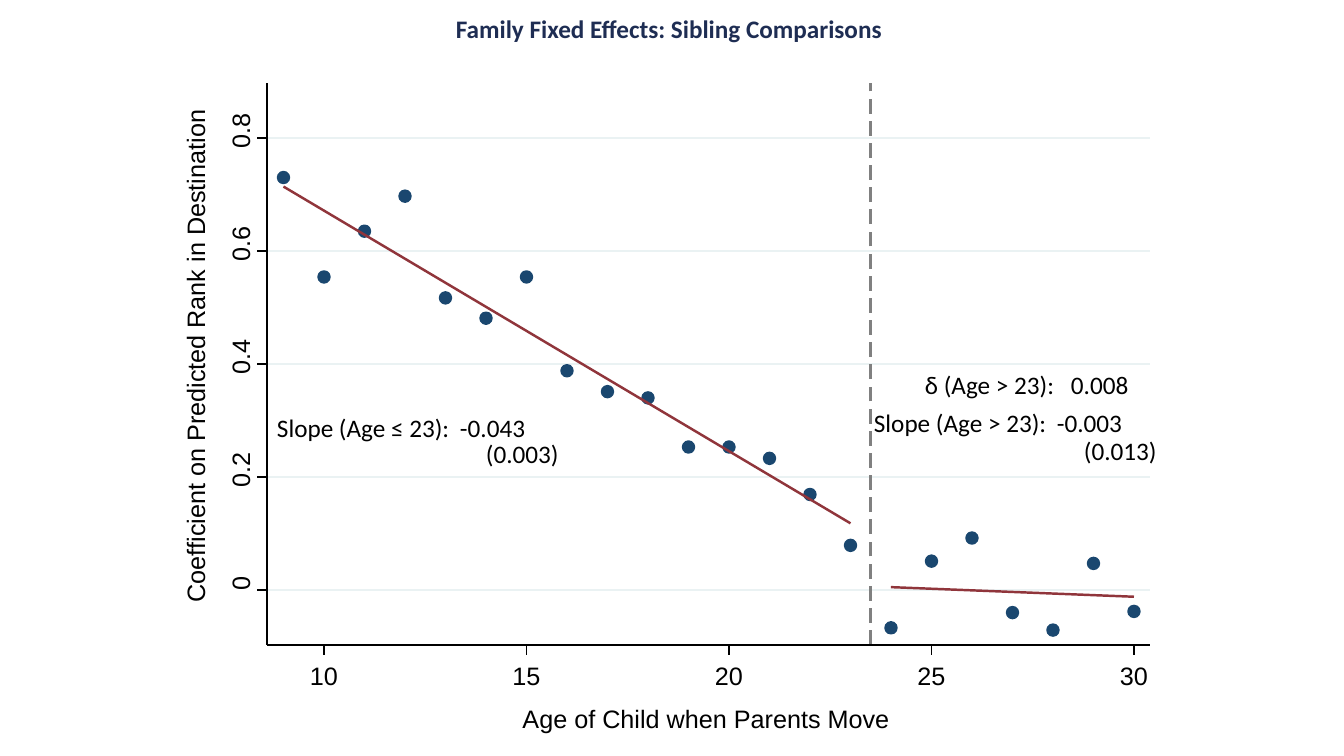
from lxml import etree
from pptx import Presentation
from pptx.dml.color import RGBColor
from pptx.enum.shapes import MSO_CONNECTOR, MSO_SHAPE
from pptx.enum.text import MSO_ANCHOR, MSO_AUTO_SIZE, PP_ALIGN
from pptx.oxml.ns import qn
from pptx.util import Emu, Pt

STRAIGHT, OVAL = MSO_CONNECTOR.STRAIGHT, MSO_SHAPE.OVAL
TOP, NO_AUTOFIT = MSO_ANCHOR.TOP, MSO_AUTO_SIZE.NONE
LEFT, CENTER = PP_ALIGN.LEFT, PP_ALIGN.CENTER

EMU_PER_PX = 914400 / 100.8
SLIDE_SIZE = (1344, 756)

COLORS = {
    "heading": "1E2D53",
    "text": "000000",
    "axis": "000000",
    "grid": "EAF2F3",
    "dots": "1A476F",
    "fit": "90353B",
    "cutoff": "808080",
}
HEADING_FONT = {"name": "Calibri", "size": Pt(18), "bold": True}
NOTE_FONT = {"name": "Calibri", "size": Pt(18)}
AXIS_FONT = {"name": "Arial", "size": Pt(18)}
NO_MARGINS = {"margin_left": 0, "margin_top": 0, "margin_right": 0, "margin_bottom": 0}
THIN, THICK = Pt(0.88), Pt(1.75)

# Plot area in px, and the scales of its two axes
PLOT_LEFT, PLOT_RIGHT, PLOT_TOP, PLOT_BOTTOM = 267, 1150, 83, 645
AGE_10_X, PX_PER_5_YEARS = 324, 202.5
ZERO_Y, PX_PER_FIFTH = 590, 113
TICK, DOT, TEXT_HEIGHT = 10, 11, 30

# Coefficients in thousandths, one for each age from 9 to 30
FIRST_AGE = 9
COEFFICIENTS = [
    730, 554, 635, 697, 517, 481, 554, 388, 351, 340, 253,
    253, 233, 169, 79, -67, 51, 92, -40, -71, 47, -38,
]
FITS = [((9, 714), (23, 118)), ((24, 5), (30, -12))]
CUTOFF_AGE = 23.5
AGE_TICKS = range(10, 31, 5)
COEFFICIENT_TICKS = range(0, 801, 200)

NOTES = [
    # text, left, top, tab position
    ("Slope (Age ≤ 23):\t-0.043", 277, 412, 183),
    ("(0.003)", 486, 438, 0),
    ("Slope (Age > 23):\t-0.003", 874, 407, 183),
    ("(0.013)", 1084, 435, 0),
    ("δ (Age > 23):\t0.008", 925, 369, 146),
]


def px(length):
    return Emu(round(length * EMU_PER_PX))


def rgb(role):
    return RGBColor.from_string(COLORS[role])


def age_x(age):
    return AGE_10_X + (age - 10) / 5 * PX_PER_5_YEARS


def coefficient_y(thousandths):
    return ZERO_Y - thousandths / 200 * PX_PER_FIFTH


def apply(target, values):
    for attribute, value in values.items():
        setattr(target, attribute, value)


def write(paragraph, text, font, role):
    run = paragraph.add_run()
    run.text = text
    apply(run.font, font)
    run.font.color.rgb = rgb(role)


def add_line(slide, start, end, role, width):
    line = slide.shapes.add_connector(STRAIGHT, *map(px, (*start, *end)))
    line.line.color.rgb = rgb(role)
    line.line.width = width
    etree.SubElement(line._element.spPr, qn("a:effectLst"))
    return line


def add_cutoff(slide):
    x = age_x(CUTOFF_AGE)
    cutoff = add_line(slide, (x, PLOT_BOTTOM), (x, PLOT_TOP), "cutoff", THICK)
    dashes = etree.Element(qn("a:custDash"))
    etree.SubElement(dashes, qn("a:ds"), d="600000", sp="300000")
    cutoff._element.spPr.find(f"{qn('a:ln')}/{qn('a:solidFill')}").addnext(dashes)


def add_dot(slide, age, thousandths):
    left, top = age_x(age) - DOT / 2, coefficient_y(thousandths) - DOT / 2
    dot = slide.shapes.add_shape(OVAL, *map(px, (left, top, DOT, DOT)))
    dot.shadow.inherit = False
    dot.fill.solid()
    dot.fill.fore_color.rgb = rgb("dots")
    dot.line.color.rgb = rgb("dots")
    dot.line.width = THICK


def add_axis_text(slide, text, center_x, center_y, width, rotation=0):
    left, top = center_x - width / 2, center_y - TEXT_HEIGHT / 2
    label = slide.shapes.add_textbox(*map(px, (left, top, width, TEXT_HEIGHT)))
    label.rotation = rotation
    apply(label.text_frame, {**NO_MARGINS, "word_wrap": False})
    paragraph = label.text_frame.paragraphs[0]
    paragraph.alignment = CENTER
    write(paragraph, text, AXIS_FONT, "text")


def add_coefficient_axis(slide):
    add_line(slide, (PLOT_LEFT, PLOT_BOTTOM), (PLOT_LEFT, PLOT_TOP), "axis", THIN)
    for tick in COEFFICIENT_TICKS:
        y = coefficient_y(tick)
        add_line(slide, (PLOT_LEFT, y), (PLOT_LEFT - TICK, y), "axis", THIN)
        add_axis_text(slide, f"{tick / 1000:g}", 240, y - 7, 35 if tick else 14, 270)
    add_axis_text(slide, "Coefficient on Predicted Rank in Destination", 195, 356, 496, 270)


def add_age_axis(slide):
    add_line(slide, (PLOT_LEFT, PLOT_BOTTOM), (PLOT_RIGHT, PLOT_BOTTOM), "axis", THIN)
    for tick in AGE_TICKS:
        x = age_x(tick)
        add_line(slide, (x, PLOT_BOTTOM), (x, PLOT_BOTTOM + TICK), "axis", THIN)
        add_axis_text(slide, str(tick), x, 675, 28)
    add_axis_text(slide, "Age of Child when Parents Move", 706, 718, 370)


def add_heading(slide, text):
    heading = slide.shapes.title
    apply(heading, {"left": px(165), "top": px(8), "width": px(1008), "height": px(40)})
    frame = heading.text_frame
    apply(frame, {"vertical_anchor": TOP, "word_wrap": True, "auto_size": NO_AUTOFIT})
    paragraph = frame.paragraphs[0]
    paragraph.alignment = CENTER
    write(paragraph, text, HEADING_FONT, "heading")


def add_note(slide, text, left, top, tab):
    note = slide.shapes.add_textbox(*map(px, (left, top, 280 if tab else 80, TEXT_HEIGHT)))
    apply(note.text_frame, {**NO_MARGINS, "word_wrap": True})
    paragraph = note.text_frame.paragraphs[0]
    paragraph.alignment = LEFT
    if tab:
        tabs = etree.SubElement(paragraph._p.get_or_add_pPr(), qn("a:tabLst"))
        etree.SubElement(tabs, qn("a:tab"), pos=str(px(tab)), algn="l")
    write(paragraph, text, NOTE_FONT, "text")


def main():
    presentation = Presentation()
    presentation.slide_width, presentation.slide_height = map(px, SLIDE_SIZE)
    slide = presentation.slides.add_slide(presentation.slide_layouts[5])
    add_heading(slide, "Family Fixed Effects: Sibling Comparisons")

    # Gridlines and cutoff
    for tick in COEFFICIENT_TICKS:
        y = coefficient_y(tick)
        add_line(slide, (PLOT_LEFT, y), (PLOT_RIGHT, y), "grid", THICK)
    add_cutoff(slide)

    # Coefficients and fitted lines
    for age, thousandths in enumerate(COEFFICIENTS, FIRST_AGE):
        add_dot(slide, age, thousandths)
    for fit in FITS:
        start, end = [(age_x(age), coefficient_y(value)) for age, value in fit]
        add_line(slide, start, end, "fit", THICK)

    # Axes and slope notes
    add_coefficient_axis(slide)
    add_age_axis(slide)
    for note in NOTES:
        add_note(slide, *note)
    presentation.save("out.pptx")


if __name__ == "__main__":
    main()
